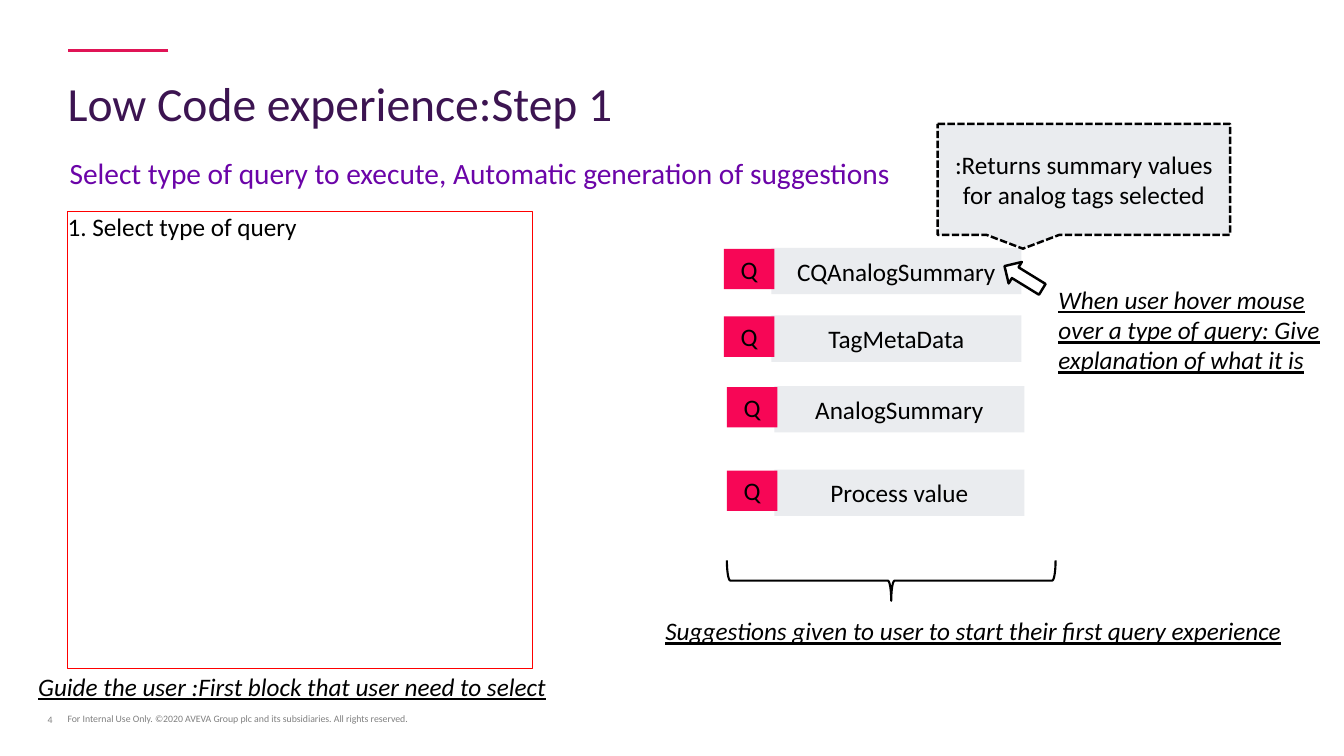
"""Build the slide on the first step of the low code query experience."""
from pptx import Presentation
from pptx.dml.color import RGBColor
from pptx.enum.dml import MSO_LINE
from pptx.enum.shapes import MSO_CONNECTOR, MSO_SHAPE
from pptx.enum.text import MSO_ANCHOR, PP_ALIGN
from pptx.oxml.ns import qn
from pptx.util import Inches, Pt
from lxml import etree

BLACK = RGBColor(0x00, 0x00, 0x00)
WHITE = RGBColor(0xFF, 0xFF, 0xFF)
GREY = RGBColor(0x80, 0x80, 0x80)
PALE = RGBColor(0xEA, 0xEC, 0xEF)
PINK = RGBColor(0xF7, 0x06, 0x56)
ACCENT = RGBColor(0xE0, 0x14, 0x56)
RED = RGBColor(0xFF, 0x00, 0x00)
PLUM = RGBColor(0x3C, 0x14, 0x51)
VIOLET = RGBColor(0x6B, 0x04, 0xA8)

LEFT, CENTER, RIGHT = PP_ALIGN.LEFT, PP_ALIGN.CENTER, PP_ALIGN.RIGHT
TOP, MIDDLE, BOTTOM = MSO_ANCHOR.TOP, MSO_ANCHOR.MIDDLE, MSO_ANCHOR.BOTTOM
RECT, CALLOUT = MSO_SHAPE.RECTANGLE, MSO_SHAPE.RECTANGULAR_CALLOUT
ARROW, BRACE = MSO_SHAPE.RIGHT_ARROW, MSO_SHAPE.LEFT_BRACE
STRAIGHT, DASH = MSO_CONNECTOR.STRAIGHT, MSO_LINE.SQUARE_DOT

SLIDE_W, SLIDE_H = 13.33, 7.5
MARGIN = 0.67
PAD = (0.1, 0.05)
FLUSH = (0, 0)

TITLE = "Low Code experience:Step 1"
SUBTITLE = "Select type of query to execute, Automatic generation of suggestions"
FIRST_BLOCK = "1. Select type of query"
TOOLTIP = ":Returns summary values for analog tags selected"
BADGE = "Q"
SUGGESTIONS = [
    ("CQAnalogSummary", 7.18, 2.46),
    ("TagMetaData", 7.18, 3.13),
    ("AnalogSummary", 7.21, 3.83),
    ("Process value", 7.21, 4.66),
]
REMARKS = [
    ("When user hover mouse over a type of query: Give explanation of what it is",
     (10.4, 2.77, 3.03, 1.01)),
    ("Guide the user :First block that user need to select",
     (0.28, 6.61, 6.59, 0.4)),
    ("Suggestions given to user to start their first query experience",
     (6.5, 6.06, 6.59, 0.4)),
]
FOOTERS = [
    ("For Internal Use Only. ©2020 AVEVA Group plc and its subsidiaries. All rights reserved.",
     (MARGIN, 6.84, 7.86, 0.35), LEFT),
    ("4", (0.28, 7, 0.24, 0.2), RIGHT),
]


def write(holder, text, size=18, color=BLACK, align=LEFT, anchor=TOP,
          pad=PAD, spacing=None, **style):
    frame = holder.text_frame
    side, edge = map(Inches, pad)
    layout = {"word_wrap": True, "vertical_anchor": anchor,
              "margin_left": side, "margin_right": side,
              "margin_top": edge, "margin_bottom": edge}
    for key, value in layout.items():
        setattr(frame, key, value)
    paragraph = frame.paragraphs[0]
    paragraph.alignment = align
    if spacing:
        paragraph.line_spacing = spacing
    run = paragraph.add_run()
    run.text = text
    look = {"name": "Calibri", "size": Pt(size), **style}
    for key, value in look.items():
        setattr(run.font, key, value)
    run.font.color.rgb = color
    return paragraph


def add_label(slide, box, text, **style):
    label = slide.shapes.add_textbox(*map(Inches, box))
    return write(label, text, **style)


def add_block(slide, kind, box, fill=None, line=None, weight=1, turn=0):
    block = slide.shapes.add_shape(kind, *map(Inches, box))
    block.shadow.inherit = False
    block.rotation = turn
    if fill is None:
        block.fill.background()
    else:
        block.fill.solid()
        block.fill.fore_color.rgb = fill
    if line is None:
        block.line.fill.background()
    else:
        block.line.color.rgb = line
        block.line.width = Pt(weight)
    return block


def add_accent(slide):
    accent = slide.shapes.add_connector(
        STRAIGHT, *map(Inches, (MARGIN + 1, 0.5, MARGIN, 0.5)))
    accent.line.color.rgb = ACCENT
    accent.line.width = Pt(2)
    etree.SubElement(accent.element.spPr, qn("a:effectLst"))


def add_headings(slide):
    title = slide.shapes.title
    spots = zip(("left", "top", "width", "height"), (MARGIN, 0.64, 6.35, 0.88))
    for side, length in spots:
        setattr(title, side, Inches(length))
    write(title, TITLE, size=34, color=PLUM, anchor=MIDDLE, pad=FLUSH, spacing=0.75)
    subtitle = add_label(slide, (MARGIN, 1.56, 12, 0.35), SUBTITLE, size=21,
                         color=VIOLET, pad=FLUSH, spacing=0.95)
    subtitle._p.get_or_add_pPr().set("marL", str(Inches(0.02)))


def add_suggestions(slide):
    for name, left, top in SUGGESTIONS:
        bar = add_block(slide, RECT, (left + 0.47, top, 2.48, 0.46), PALE)
        write(bar, name, align=CENTER, anchor=MIDDLE)
        badge = add_block(slide, RECT, (left, top + 0.01, 0.5, 0.4), PINK)
        write(badge, BADGE, align=CENTER)


def main():
    deck = Presentation()
    deck.slide_width, deck.slide_height = Inches(SLIDE_W), Inches(SLIDE_H)
    slide = deck.slides.add_slide(deck.slide_layouts[5])

    add_accent(slide)
    add_headings(slide)
    first_block = add_block(slide, RECT, (MARGIN, 2.1, 4.61, 4.53), None, RED, 0.75)
    write(first_block, FIRST_BLOCK, pad=FLUSH)
    for text, box, align in FOOTERS:
        add_label(slide, box, text, size=7, color=GREY, align=align,
                  anchor=BOTTOM, pad=FLUSH)

    add_suggestions(slide)
    tooltip = add_block(slide, CALLOUT, (9.3, 1.23, 2.9, 1.1), PALE, BLACK, 1.75)
    tooltip.line.dash_style = DASH
    write(tooltip, TOOLTIP, align=CENTER, anchor=MIDDLE)
    add_block(slide, ARROW, (9.93, 2.63, 0.44, 0.25), WHITE, BLACK, 1.75, 211.6)
    add_block(slide, BRACE, (8.64, 4.13, 0.4, 3.26), None, BLACK, 1.5, 270)
    for text, box in REMARKS:
        add_label(slide, box, text, italic=True, underline=True)

    deck.save("out.pptx")


if __name__ == "__main__":
    main()
